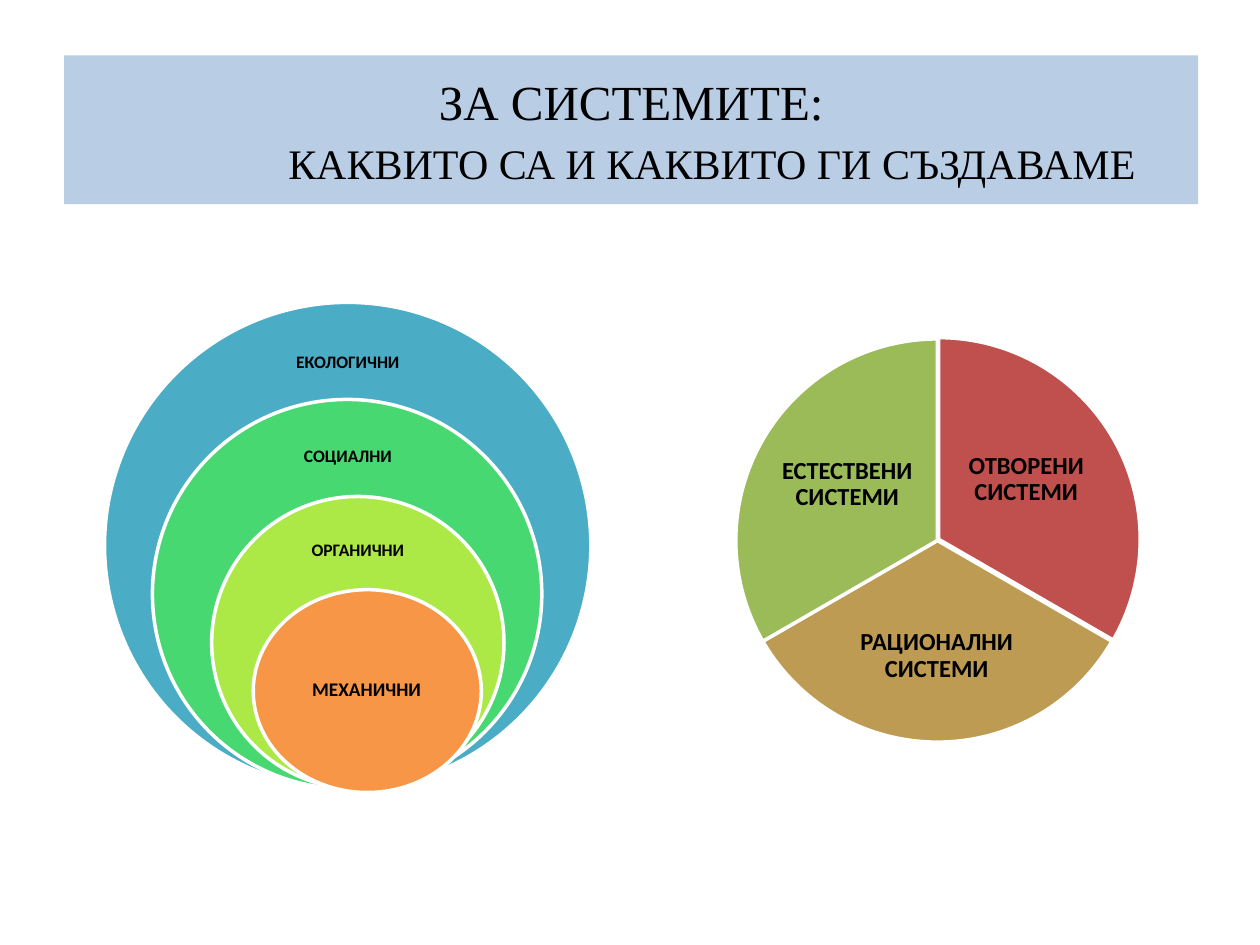
import pptx
import pptx.util
import pptx.dml.color
import pptx.enum.shapes
import pptx.enum.text

Inches, Pt = pptx.util.Inches, pptx.util.Pt
Kind = pptx.enum.shapes.MSO_SHAPE
Align = pptx.enum.text.PP_ALIGN
Anchor = pptx.enum.text.MSO_ANCHOR


def color(code):
    return pptx.dml.color.RGBColor.from_string(code)


def add_part(group, kind, spot, fill, text, area, size, inset):
    """Add a white-edged shape and the label that lies over it."""
    shape = group.shapes.add_shape(kind, *map(Inches, spot))
    shape.shadow.inherit = False
    shape.fill.solid()
    shape.fill.fore_color.rgb = color(fill)
    shape.line.color.rgb = color("FFFFFF")
    shape.line.width = Pt(2)

    label = group.shapes.add_textbox(*map(Inches, area))
    frame = label.text_frame
    frame.word_wrap = True
    frame.vertical_anchor = Anchor.MIDDLE
    frame.margin_left = frame.margin_right = Inches(inset)
    frame.margin_top = frame.margin_bottom = Inches(inset)
    frame.text = text
    para = frame.paragraphs[0]
    para.alignment = Align.CENTER
    para.line_spacing = 0.9
    font = para.runs[0].font
    font.name, font.size, font.bold = "Calibri", Pt(size), True
    font.color.rgb = color("000000")
    return shape


deck = pptx.Presentation()
deck.slide_width, deck.slide_height = Inches(10), Inches(7.5)
slide = deck.slides.add_slide(deck.slide_layouts[5])

# Title band
title = slide.shapes.title
title.left, title.top = Inches(0.51), Inches(0.44)
title.width, title.height = Inches(9), Inches(1.18)
title.fill.solid()
title.fill.fore_color.rgb = color("B9CDE5")
title.text_frame.vertical_anchor = Anchor.MIDDLE
title.text_frame.text = "ЗА СИСТЕМИТЕ:\nКАКВИТО СА И КАКВИТО ГИ СЪЗДАВАМЕ"
for para, size in zip(title.text_frame.paragraphs, (28, 24)):
    para.alignment = Align.CENTER
    font = para.runs[0].font
    font.name, font.size = "Times New Roman", Pt(size)
    font.color.rgb = color("000000")
# The second line sits right of centre
para.space_before = Pt(4)
para._p.get_or_add_pPr().set("marL", str(Inches(1.28)))

# Pie of three equal sectors: offset, start and end angle, fill, text, label area
pie = slide.shapes.add_group_shape()
sectors = [
    (5.85, 2.68, 270, 30, "C0504D", "ОТВОРЕНИ СИСТЕМИ", (7.6, 3.27, 1.09, 1.07)),
    (5.84, 2.69, 30, 150, "BD9B53", "РАЦИОНАЛНИ СИСТЕМИ", (6.71, 4.71, 1.45, 0.99)),
    (5.84, 2.69, 150, 270, "9BBB59", "ЕСТЕСТВЕНИ СИСТЕМИ", (6.18, 3.31, 1.09, 1.07)),
]
for left, top, start, end, fill, text, area in sectors:
    sector = add_part(pie, Kind.PIE, (left, top, 3.2, 3.2), fill, text, area, 14, 0.02)
    # Angles are stored in 60000ths of a degree, adjustments in 100000ths
    sector.adjustments[0] = start * 0.6
    sector.adjustments[1] = end * 0.6

# Nested circles, outermost first
nest = slide.shapes.add_group_shape()
rings = [
    ((0.83, 2.4, 3.86, 3.86), "4BACC6", "ЕКОЛОГИЧНИ", (2.22, 2.59, 1.08, 0.58), 10, 0.08),
    ((1.21, 3.17, 3.09, 3.09), "47D872", "СОЦИАЛНИ", (2.22, 3.35, 1.08, 0.56), 10, 0.08),
    ((1.68, 3.94, 2.32, 2.32), "ACE946", "ОРГАНИЧНИ", (2.3, 4.11, 1.08, 0.52), 10, 0.08),
    ((2.01, 4.68, 1.81, 1.61), "F79646", "МЕХАНИЧНИ", (2.27, 5.08, 1.28, 0.8), 11, 0.09),
]
for spot, fill, text, area, size, inset in rings:
    add_part(nest, Kind.OVAL, spot, fill, text, area, size, inset)

deck.save("out.pptx")
